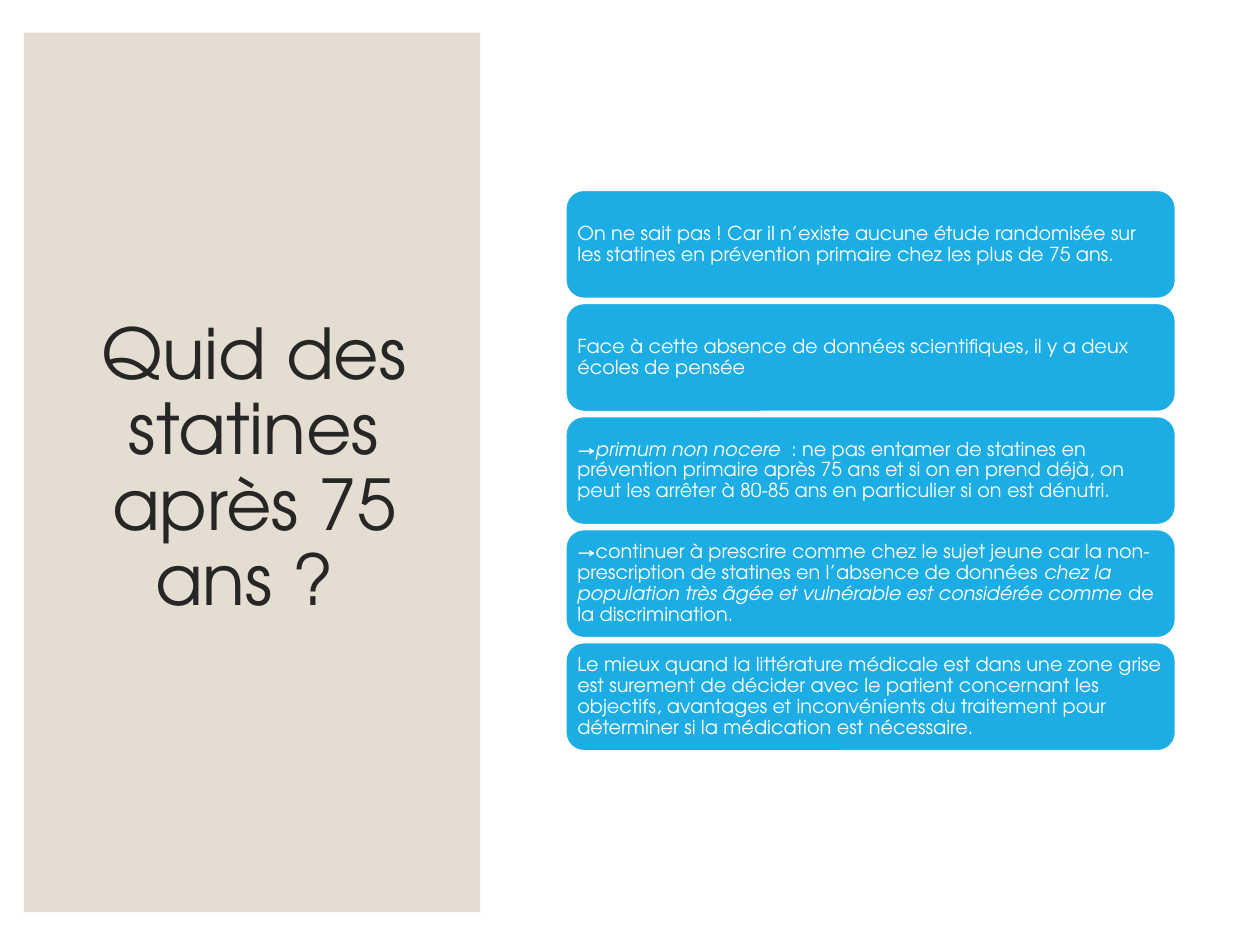
from pptx import Presentation
from pptx.dml.color import RGBColor
from pptx.enum import shapes, text
from pptx.util import Inches, Pt

COLORS = {"page": "FFFFFF", "panel": "E3DED1", "title": "262626", "card": "1CADE4", "card_text": "FFFFFF"}
FONT = "TeX Gyre Adventor"


def write(frame, spans, size, color, align, inset_x, inset_y):
    frame.word_wrap = True
    frame.vertical_anchor = text.MSO_ANCHOR.MIDDLE
    frame.margin_left = frame.margin_right = Inches(inset_x)
    frame.margin_top = frame.margin_bottom = Inches(inset_y)
    para = frame.paragraphs[0]
    para.alignment = align
    para.line_spacing = 0.9
    for words, italic in spans:
        span = para.add_run()
        span.text = words
        span.font.name = FONT
        span.font.size = Pt(size)
        span.font.italic = italic
        span.font.color.rgb = RGBColor.from_string(COLORS[color])


deck = Presentation()
deck.slide_width = Inches(10)
deck.slide_height = Inches(7.5)
page = deck.slides.add_slide(deck.slide_layouts[6])
page.background.fill.solid()
page.background.fill.fore_color.rgb = RGBColor.from_string(COLORS["page"])

panel = page.shapes.add_shape(
    shapes.MSO_SHAPE.RECTANGLE, Inches(0.19), Inches(0.26), Inches(3.62), Inches(6.98)
)
panel.shadow.inherit = False
panel.fill.solid()
panel.fill.fore_color.rgb = RGBColor.from_string(COLORS["panel"])
panel.line.fill.background()

title = page.shapes.add_textbox(Inches(0.47), Inches(0.61), Inches(3.09), Inches(6.24))
write(title.text_frame, [("Quid des statines après 75 ans ? ", False)],
      size=40, color="title", align=text.PP_ALIGN.CENTER, inset_x=0.1, inset_y=0.05)

cards = [
    [("On ne sait pas ! Car il n’existe aucune étude randomisée sur les statines "
      "en prévention primaire chez les plus de 75 ans.", False)],
    [("Face à cette absence de données scientifiques, il y a deux écoles de pensée", False)],
    [("→", False),
     ("primum non nocere", True),
     ("  : ne pas entamer de statines en prévention primaire après 75 ans et si on en prend "
      "déjà, on peut les arrêter à 80-85 ans en particulier si on est dénutri.", False)],
    [("→continuer à prescrire comme chez le sujet jeune car la non-prescription de statines "
      "en l’absence de données", False),
     (" chez la population très âgée et vulnérable est considérée comme ", True),
     ("de la discrimination.", False)],
    [("Le mieux quand la littérature médicale est dans une zone grise est surement de décider "
      "avec le patient concernant les objectifs, avantages et inconvénients du traitement pour "
      "déterminer si la médication est nécessaire.", False)],
]
first_top, last_top = 1.51, 5.1
step = (last_top - first_top) / (len(cards) - 1)

for index, spans in enumerate(cards):
    card = page.shapes.add_shape(
        shapes.MSO_SHAPE.ROUNDED_RECTANGLE,
        Inches(4.49), Inches(first_top + index * step), Inches(4.84), Inches(0.86)
    )
    card.shadow.inherit = False
    card.fill.solid()
    card.fill.fore_color.rgb = RGBColor.from_string(COLORS["card"])
    card.line.color.rgb = RGBColor.from_string(COLORS["page"])
    card.line.width = Pt(1)
    write(card.text_frame, spans, size=11, color="card_text",
          align=text.PP_ALIGN.LEFT, inset_x=0.05, inset_y=0.05)

deck.save("out.pptx")
